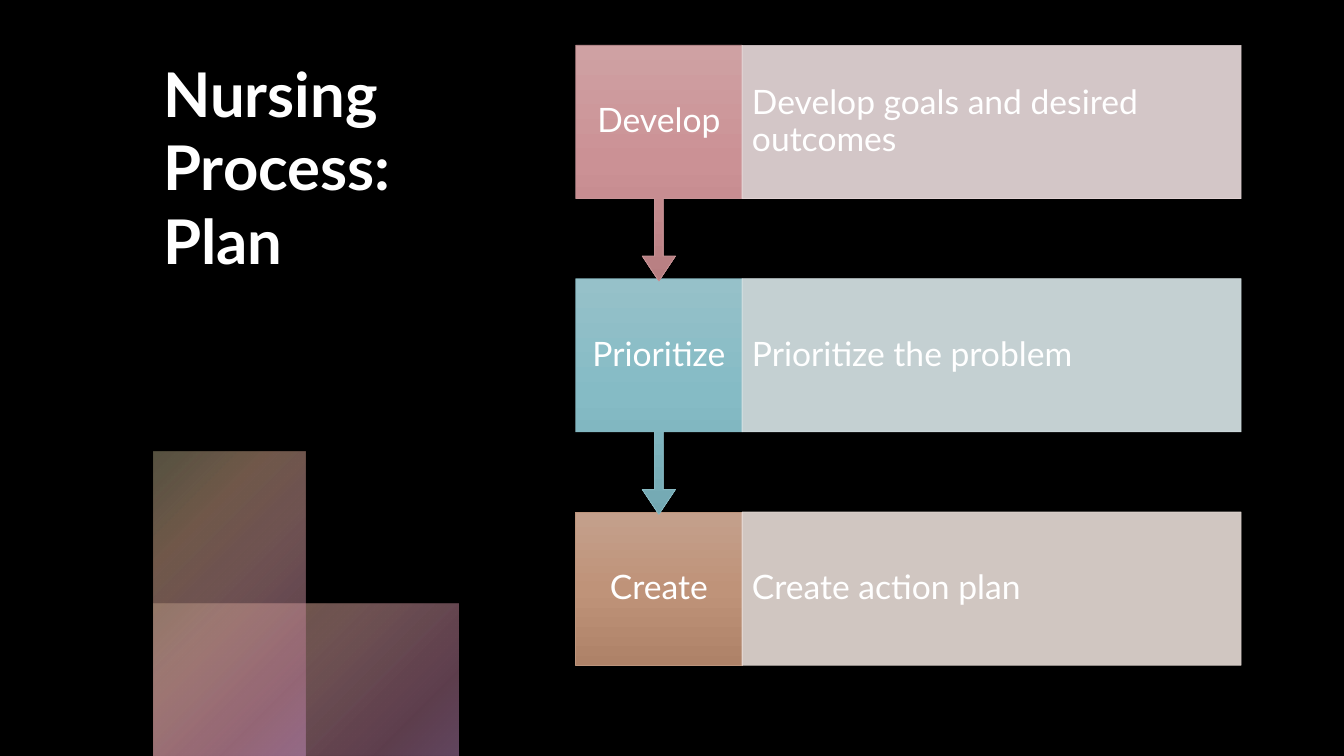
from dataclasses import dataclass

from lxml.etree import SubElement
from pptx import Presentation
from pptx.dml.color import RGBColor as RGB
from pptx.enum.shapes import MSO_SHAPE as SHAPE
from pptx.enum.text import MSO_ANCHOR as ANCHOR, MSO_AUTO_SIZE as AUTO_SIZE, PP_ALIGN as ALIGN
from pptx.oxml.ns import qn
from pptx.util import Inches, Pt


@dataclass(frozen=True)
class Theme:
    font: str = "Lato"
    title_size: int = 44
    body_size: int = 24
    background: str = "000000"
    text: str = "FFFFFF"
    border: float = 0.5
    panel_opacity: int = 90
    glow: tuple = ((0, "AAA17E", 50), (25, "BC947C", 60), (50, "C89497", 55),
                   (81, "BC7C9A", 50), (99, "C58EBF", 50))
    rose: tuple = ("CFA1A3", "CB9195", "B77E81", "C89497", "EBDCDD")
    teal: tuple = ("96C1C9", "85BBC5", "73A8B2", "88B9C2", "DAE7E9")
    clay: tuple = ("C4A08C", "BF9379", "AE8268", "BC947C", "E7DCD7")


THEME = Theme()
STEPS = (
    ("Develop", "Develop goals and desired outcomes", THEME.rose),
    ("Prioritize", "Prioritize the problem", THEME.teal),
    ("Create", "Create action plan", THEME.clay),
)


def set_opacity(color, percent):
    SubElement(color, qn("a:alpha"), val=str(percent * 1000))


def fill_gradient(shape, stops, radial=False):
    shape.fill.background()
    properties = shape.element.spPr
    gradient = properties.makeelement(qn("a:gradFill"), {"rotWithShape": "1"})
    stop_list = SubElement(gradient, qn("a:gsLst"))
    for position, color, opacity in stops:
        stop = SubElement(stop_list, qn("a:gs"), pos=str(position * 1000))
        set_opacity(SubElement(stop, qn("a:srgbClr"), val=color), opacity)
    if radial:
        circle = SubElement(gradient, qn("a:path"), {"path": "circle"})
        SubElement(circle, qn("a:fillToRect"), r="100000", b="100000")
    else:
        SubElement(gradient, qn("a:lin"), ang="5400000", scaled="0")
    properties.replace(properties.find(qn("a:noFill")), gradient)


def add_block(slide, kind, left, top, width, height):
    block = slide.shapes.add_shape(
        kind, Inches(left), Inches(top), Inches(width), Inches(height))
    block.shadow.inherit = False
    return block


def outline(shape, color):
    shape.line.color.rgb = RGB.from_string(color)
    shape.line.width = Pt(THEME.border)


def style_text(paragraph, size, align, bold=False):
    paragraph.alignment = align
    for run in paragraph.runs:
        run.font.name = THEME.font
        run.font.size = Pt(size)
        run.font.bold = bold
        run.font.color.rgb = RGB.from_string(THEME.text)


def write_label(shape, text, align, side_inset, end_inset):
    frame = shape.text_frame
    frame.text = text
    frame.word_wrap = True
    frame.vertical_anchor = ANCHOR.MIDDLE
    frame.margin_left = frame.margin_right = Inches(side_inset)
    frame.margin_top = frame.margin_bottom = Inches(end_inset)
    frame.paragraphs[0].line_spacing = 0.9
    style_text(frame.paragraphs[0], THEME.body_size, align)


def place_title(slide, left, top, width, height):
    title = slide.shapes.title
    title.left, title.top = Inches(left), Inches(top)
    title.width, title.height = Inches(width), Inches(height)
    frame = title.text_frame
    frame.text = "Nursing Process: Plan"
    frame.word_wrap = True
    frame.auto_size = AUTO_SIZE.NONE
    frame.vertical_anchor = ANCHOR.TOP
    style_text(frame.paragraphs[0], THEME.title_size, ALIGN.LEFT, bold=True)


def draw_corner(slide, left, top, width, height):
    bars = (
        (left, top + height / 2, width, height / 2),
        (left, top, width / 2, height),
    )
    for bar_box in bars:
        bar = add_block(slide, SHAPE.RECTANGLE, *bar_box)
        fill_gradient(bar, THEME.glow, radial=True)
        bar.line.fill.background()


def draw_step(slide, step, is_last, left, top, width, height):
    name, detail, (light, middle, dark, edge, pale) = step
    key_width = width / 4
    if is_last:
        key = add_block(slide, SHAPE.RECTANGLE, left, top, key_width, height)
    else:
        box_share = 0.65
        key = add_block(slide, SHAPE.DOWN_ARROW_CALLOUT,
                        left, top, key_width, height / box_share)
        for index, value in enumerate((0.05, 0.1, 0.15, box_share)):
            key.adjustments[index] = value
    fill_gradient(key, ((0, light, 100), (50, middle, 100), (100, dark, 100)))
    outline(key, edge)
    write_label(key, name, ALIGN.CENTER, 0.12, 0.19)

    panel = add_block(slide, SHAPE.RECTANGLE,
                      left + key_width, top, width - key_width, height)
    panel.fill.solid()
    panel.fill.fore_color.rgb = RGB.from_string(pale)
    outline(panel, pale)
    for color in panel.element.spPr.iter(qn("a:srgbClr")):
        set_opacity(color, THEME.panel_opacity)
    write_label(panel, detail, ALIGN.LEFT, 0.1, 0.33)


def draw_process(slide, left, top, width, height):
    step_height = 1.52
    last = len(STEPS) - 1
    pitch = (height - step_height) / last
    for index in reversed(range(len(STEPS))):
        draw_step(slide, STEPS[index], index == last,
                  left, top + index * pitch, width, step_height)


def main():
    deck = Presentation()
    deck.slide_width, deck.slide_height = Inches(13.33), Inches(7.5)
    slide = deck.slides.add_slide(deck.slide_layouts.get_by_name("Title Only"))
    slide.background.fill.solid()
    slide.background.fill.fore_color.rgb = RGB.from_string(THEME.background)
    draw_corner(slide, 1.52, 4.48, 3.03, 3.02)
    place_title(slide, 1.52, 0.5, 3.48, 3.71)
    draw_process(slide, 5.71, 0.45, 6.6, 6.15)
    deck.save("out.pptx")


if __name__ == "__main__":
    main()
